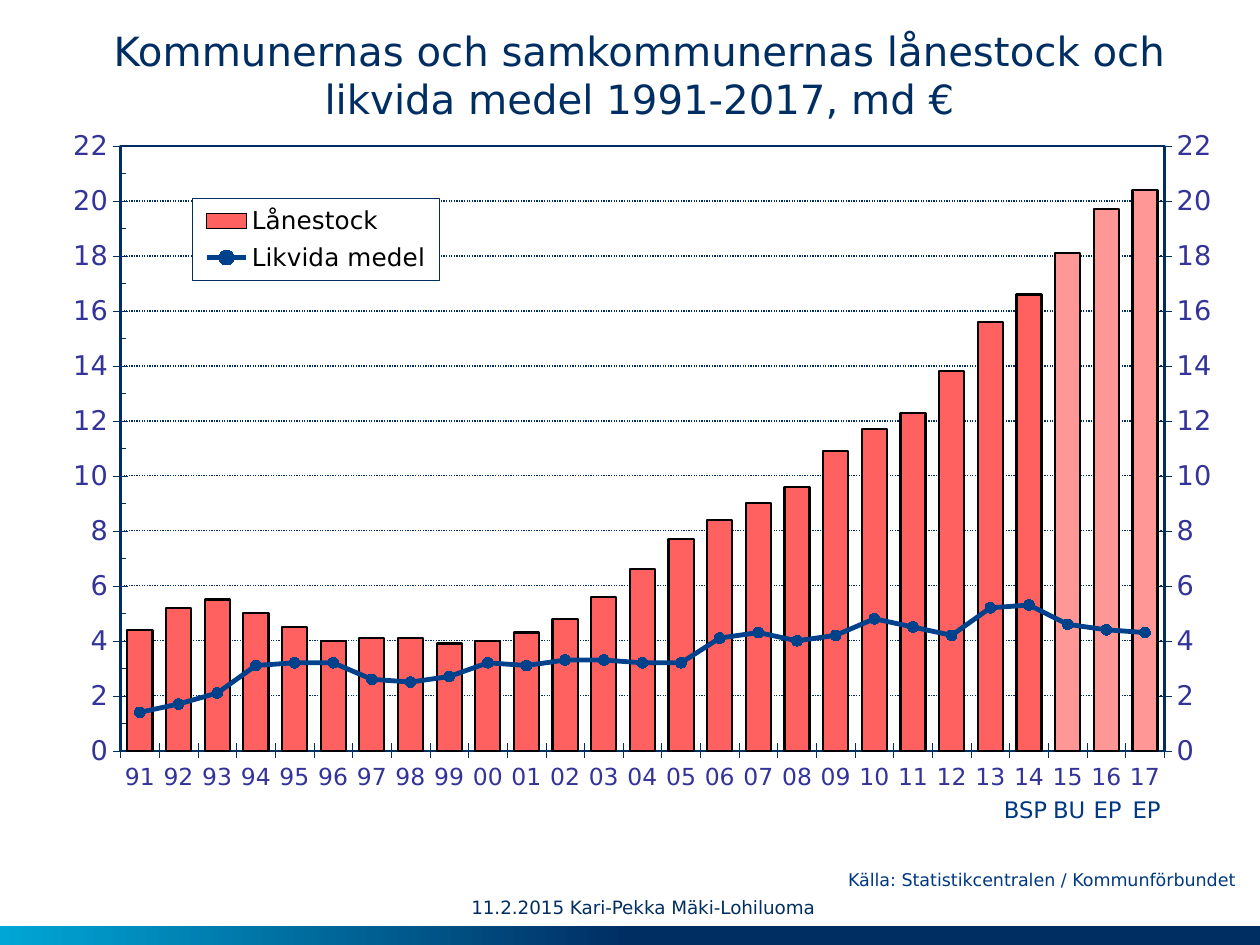
from copy import deepcopy
from typing import NamedTuple, Optional

from lxml.etree import _Element
from pptx import Presentation
from pptx.chart.axis import CategoryAxis, ValueAxis
from pptx.chart.data import CategoryChartData
from pptx.dml.color import RGBColor
from pptx.enum.chart import (XL_CHART_TYPE, XL_LEGEND_POSITION, XL_MARKER_STYLE,
                             XL_TICK_LABEL_POSITION, XL_TICK_MARK)
from pptx.enum.dml import MSO_LINE
from pptx.enum.shapes import MSO_SHAPE
from pptx.enum.text import MSO_ANCHOR, PP_ALIGN
from pptx.oxml import parse_xml
from pptx.oxml.ns import nsdecls, qn
from pptx.util import Pt

FONT = "DejaVu Sans"
NAVY = RGBColor(0x00, 0x2E, 0x63)
BLUE = RGBColor(0x00, 0x38, 0x82)
CYAN = RGBColor(0x00, 0xA6, 0xD6)
AXIS_BLUE = RGBColor(0x33, 0x33, 0x99)
CASH_BLUE = RGBColor(0x00, 0x41, 0x8C)
LOAN_RED = RGBColor(0xFF, 0x61, 0x61)
FORECAST_PINK = RGBColor(0xFF, 0x97, 0x97)
BLACK = RGBColor(0x00, 0x00, 0x00)

YEARS = [f"{year % 100:02d}" for year in range(1991, 2018)]
FORECAST_YEARS = 3
LOANS = [4.4, 5.2, 5.5, 5, 4.5, 4, 4.1, 4.1, 3.9, 4, 4.3, 4.8, 5.6, 6.6, 7.7,
         8.4, 9, 9.6, 10.9, 11.7, 12.3, 13.8, 15.6, 16.6, 18.1, 19.7, 20.4]
CASH = [1.4, 1.7, 2.1, 3.1, 3.2, 3.2, 2.6, 2.5, 2.7, 3.2, 3.1, 3.3, 3.3, 3.2,
        3.2, 4.1, 4.3, 4, 4.2, 4.8, 4.5, 4.2, 5.2, 5.3, 4.6, 4.4, 4.3]


class Label(NamedTuple):
    text: str
    left: float
    top: float
    width: float
    height: float
    size: float
    color: RGBColor
    align: Optional[PP_ALIGN] = None
    anchor: MSO_ANCHOR = MSO_ANCHOR.TOP
    inset: tuple[float, float] = (0, 0)
    wrap: bool = True


def year_tag(text: str, left: float, width: float) -> Label:
    return Label(text, left, 451, width, 23, 13, BLUE, inset=(7.2, 3.6), wrap=False)


LABELS = [
    Label("Kommunernas och samkommunernas lånestock och likvida medel 1991-2017, md €",
          25.6, 15.1, 680.4, 55.4, 23, NAVY, align=PP_ALIGN.CENTER),
    Label("11.2.2015 Kari-Pekka Mäki-Lohiluoma", 269.3, 507.8, 244.1, 20.9, 10.5, NAVY,
          anchor=MSO_ANCHOR.MIDDLE),
    Label("Källa: Statistikcentralen / Kommunförbundet",
          484.6, 496.8, 240.5, 12.2, 10, BLUE),
    year_tag("BSP", 566.6, 40.3),
    year_tag("BU", 594.7, 33.1),
    year_tag("EP", 617.8, 31),
    year_tag("EP", 640.1, 31),
]


def set_font(font, size: float, color: RGBColor) -> None:
    font.name, font.size, font.bold = FONT, Pt(size), False
    font.color.rgb = color


def add_label(shapes, label: Label) -> None:
    box = shapes.add_textbox(*map(Pt, label[1:5]))
    frame = box.text_frame
    frame.word_wrap = label.wrap
    frame.vertical_anchor = label.anchor
    frame.margin_left = frame.margin_right = Pt(label.inset[0])
    frame.margin_top = frame.margin_bottom = Pt(label.inset[1])
    frame.text = label.text
    paragraph = frame.paragraphs[0]
    paragraph.alignment = label.align
    set_font(paragraph.runs[0].font, label.size, label.color)


def layout_xml(x: float, y: float, w: float, h: float, target: str = "") -> _Element:
    inner = f'<c:layoutTarget val="{target}"/>' if target else ""
    sizes = "".join(f'<c:{key} val="{value}"/>' for key, value in zip("xywh", (x, y, w, h)))
    return parse_xml(f'<c:layout {nsdecls("c")}><c:manualLayout>{inner}'
                     f'<c:xMode val="edge"/><c:yMode val="edge"/>{sizes}'
                     f'</c:manualLayout></c:layout>')


def frame_xml(fill: str, width: float) -> _Element:
    return parse_xml(f'<c:spPr {nsdecls("c", "a")}>{fill}<a:ln w="{Pt(width)}">'
                     f'<a:solidFill><a:srgbClr val="{NAVY}"/></a:solidFill></a:ln></c:spPr>')


def drop_layout(parent: _Element) -> None:
    for layout in parent.findall(qn("c:layout")):
        parent.remove(layout)


def split_off_line(chart) -> tuple[CategoryAxis, ValueAxis]:
    """Turn the second series into a line on its own pair of axes."""
    bars = chart.plots[0]._element
    cash = bars.findall(qn("c:ser"))[1]
    for tag in ("c:invertIfNegative", "c:spPr"):
        for child in cash.findall(qn(tag)):
            cash.remove(child)
    line = parse_xml(f'<c:lineChart {nsdecls("c")}><c:grouping val="standard"/>'
                     '<c:varyColors val="0"/><c:marker val="1"/>'
                     '<c:axId val="5001"/><c:axId val="5002"/></c:lineChart>')
    line.insert(2, cash)
    bars.addnext(line)

    left_value = chart.value_axis._element
    category, value = deepcopy(chart.category_axis._element), deepcopy(left_value)
    for axis, own_id, other_id in ((category, "5001", "5002"), (value, "5002", "5001")):
        axis.find(qn("c:axId")).set("val", own_id)
        axis.find(qn("c:crossAx")).set("val", other_id)
    value.find(qn("c:axPos")).set("val", "r")
    value.find(qn("c:crosses")).set("val", "max")
    left_value.addnext(value)
    value.addnext(category)
    return CategoryAxis(category), ValueAxis(value)


def style_axis(axis, size: float) -> None:
    axis.major_tick_mark = XL_TICK_MARK.CROSS
    axis.minor_tick_mark = XL_TICK_MARK.NONE
    axis.has_major_gridlines = False
    axis.format.line.color.rgb = NAVY
    axis.format.line.width = Pt(0.31)
    set_font(axis.tick_labels.font, size, AXIS_BLUE)


def style_value_axis(axis: ValueAxis) -> None:
    style_axis(axis, 15.5)
    axis.minimum_scale, axis.maximum_scale, axis.major_unit = 0, 22, 2
    axis.tick_labels.number_format = "0"
    axis.tick_labels.number_format_is_linked = False


def add_loan_chart(shapes) -> None:
    data = CategoryChartData(number_format="0.0")
    data.categories = YEARS
    data.add_series("Lånestock", LOANS)
    data.add_series("Likvida medel", CASH)
    chart = shapes.add_chart(XL_CHART_TYPE.COLUMN_CLUSTERED, Pt(29.2), Pt(70.6),
                             Pt(673.2), Pt(388.8), data).chart
    chart.has_title = False
    set_font(chart.font, 14, NAVY)

    # Axes: the left ones are fetched before the right ones exist
    year_axis, left_axis = chart.category_axis, chart.value_axis
    hidden_axis, right_axis = split_off_line(chart)
    hidden_axis.visible = False
    style_axis(year_axis, 13.4)
    style_value_axis(left_axis)
    style_value_axis(right_axis)
    right_axis.tick_label_position = XL_TICK_LABEL_POSITION.HIGH
    left_axis.minor_tick_mark = XL_TICK_MARK.INSIDE
    left_axis.minor_unit = 1
    grid = left_axis.major_gridlines.format.line
    grid.color.rgb, grid.width, grid.dash_style = NAVY, Pt(0.75), MSO_LINE.ROUND_DOT

    # Loan columns, forecasts lighter
    columns, lines = chart.plots
    columns.gap_width = 54
    columns.vary_by_categories = False
    loans = columns.series[0]
    forecasts = [loans.points[i] for i in range(len(YEARS) - FORECAST_YEARS, len(YEARS))]
    for part in (loans, *forecasts):
        part.format.fill.solid()
        part.format.fill.fore_color.rgb = LOAN_RED if part is loans else FORECAST_PINK
        part.format.line.color.rgb = BLACK
        part.format.line.width = Pt(1.25)

    # Cash line
    cash = lines.series[0]
    cash.smooth = False
    cash.format.line.color.rgb = CASH_BLUE
    cash.format.line.width = Pt(2.75)
    cash.marker.style, cash.marker.size = XL_MARKER_STYLE.CIRCLE, 6
    cash.marker.format.fill.solid()
    cash.marker.format.fill.fore_color.rgb = CASH_BLUE
    cash.marker.format.line.color.rgb = CASH_BLUE

    # Plot area and legend
    plot_area = columns._element.getparent()
    drop_layout(plot_area)
    plot_area.insert(0, layout_xml(0.059, 0.033, 0.886, 0.889, "inner"))
    plot_area.append(frame_xml("<a:noFill/>", 1.5))
    chart.has_legend = True
    legend = chart.legend
    legend.position = XL_LEGEND_POSITION.RIGHT
    legend.include_in_layout = False
    set_font(legend.font, 14.1, BLACK)
    box = legend._element
    drop_layout(box)
    box.find(qn("c:legendPos")).addnext(layout_xml(0.12, 0.11, 0.21, 0.12))
    white = '<a:solidFill><a:srgbClr val="FFFFFF"/></a:solidFill>'
    box.find(qn("c:overlay")).addnext(frame_xml(white, 0.5))


def add_footer_band(shapes) -> None:
    band = shapes.add_shape(MSO_SHAPE.RECTANGLE, Pt(0), Pt(529.2), Pt(720), Pt(10.8))
    band.shadow.inherit = False
    band.line.fill.background()
    band.fill.gradient()
    band.fill.gradient_angle = 180
    for stop, position, color in zip(band.fill.gradient_stops, (0.5, 1), (NAVY, CYAN)):
        stop.position, stop.color.rgb = position, color


def main() -> None:
    deck = Presentation()
    deck.slide_width, deck.slide_height = Pt(720), Pt(540)
    shapes = deck.slides.add_slide(deck.slide_layouts[6]).shapes
    add_footer_band(shapes)
    add_loan_chart(shapes)
    for label in LABELS:
        add_label(shapes, label)
    deck.save("out.pptx")


if __name__ == "__main__":
    main()
